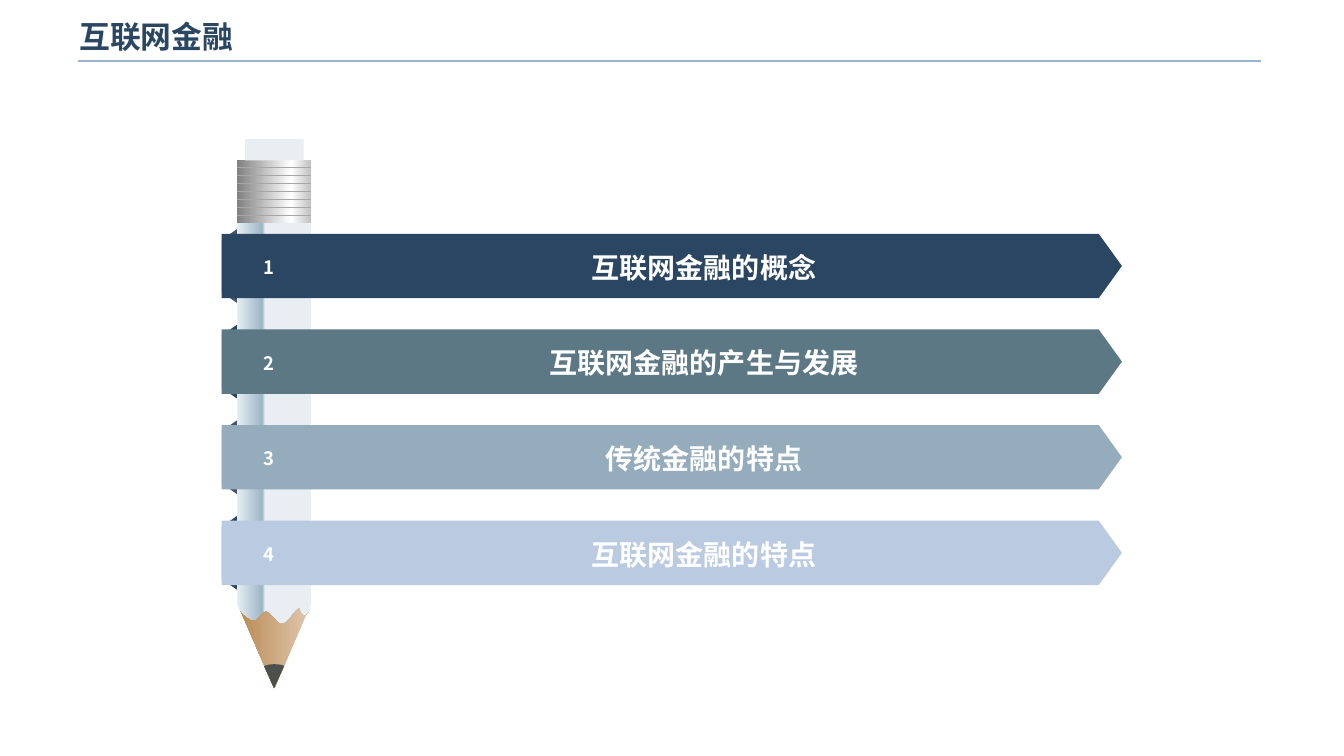
from dataclasses import dataclass

from lxml.etree import SubElement
from pptx import Presentation
from pptx.dml.color import RGBColor
from pptx.enum.shapes import MSO_CONNECTOR as Connector, MSO_SHAPE as Preset
from pptx.enum.text import MSO_ANCHOR as Anchor, MSO_AUTO_SIZE as AutoSize, PP_ALIGN as Align
from pptx.oxml.ns import qn
from pptx.util import Pt

NAVY = RGBColor(0x2B, 0x46, 0x63)
SLATE = RGBColor(0x42, 0x56, 0x68)
TEAL = RGBColor(0x5C, 0x78, 0x85)
MIST = RGBColor(0x94, 0xAC, 0xBC)
PERIWINKLE = RGBColor(0xB9, 0xCA, 0xE1)
RULE_BLUE = RGBColor(0x98, 0xB4, 0xD2)
PALE = RGBColor(0xE8, 0xEE, 0xF2)
SHADE = RGBColor(0x9C, 0xB6, 0xC7)
LIGHT_WOOD = RGBColor(0xE1, 0xC9, 0xAF)
DARK_WOOD = RGBColor(0xB8, 0x89, 0x54)
GRAPHITE = RGBColor(0x4C, 0x50, 0x4C)
SILVER = RGBColor(0xBF, 0xBF, 0xBF)
STEEL = RGBColor(0x80, 0x80, 0x80)
GROOVE = RGBColor(0xA6, 0xA6, 0xA6)
WHITE = RGBColor(0xFF, 0xFF, 0xFF)

TITLE_FONT = "Arial"
BODY_FONT = "Noto Sans CJK SC"

BAR_LEFT, BAR_TOP, BAR_WIDTH, BAR_HEIGHT = 158.4, 167, 643, 46
BAR_PITCH = 68.3
PENCIL_LEFT, PENCIL_WIDTH = 169.2, 53.3
FOLD_LENGTH, FOLD_DEPTH = 52.6, 10.8
FERRULE_TOP, FERRULE_HEIGHT = 114.5, 44.6
GROOVE_COUNT, GROOVE_PITCH = 7, 5.76

Point = tuple[float, float]
Stops = list[tuple[int, RGBColor]]


@dataclass
class Topic:
    text: str
    color: RGBColor
    fold_color: RGBColor


TOPICS = [
    Topic("互联网金融的概念", NAVY, SLATE),
    Topic("互联网金融的产生与发展", TEAL, NAVY),
    Topic("传统金融的特点", MIST, SLATE),
    Topic("互联网金融的特点", PERIWINKLE, NAVY),
]

# Each entry is one point of a straight edge, or three points of a cubic curve.
BODY_OUTLINE = [
    [(169.2, 159.1)],
    [(222.5, 159.1)],
    [(222.5, 429.8)],
    [(221.8, 436.3), (219.6, 438.5), (217.4, 439.2)],
    [(213.8, 437), (215.3, 432.7), (213.1, 434.2)],
    [(210.2, 434.9), (205.9, 444.2), (201.6, 445)],
    [(198, 445), (193.7, 436.3), (190.1, 436.3)],
    [(186.5, 436.3), (183.6, 443.5), (180.7, 442.8)],
    [(175, 440.6), (171.4, 436.3), (169.2, 432)],
]
TIP_OUTLINE = [
    [(195.8, 474.5)],
    [(200.2, 474.5), (202.3, 475.2), (203, 475.9)],
    [(195.8, 491.8)],
    [(188.6, 475.9)],
    [(190.1, 475.2), (192.2, 474.5), (195.8, 474.5)],
]


def fill_solid(shape, color: RGBColor) -> None:
    shape.fill.solid()
    shape.fill.fore_color.rgb = color


def fill_gradient(shape, stops: Stops, angle: int) -> None:
    """Fill with any number of stops; the angle runs clockwise in degrees."""
    shape.fill.gradient()
    gradient = shape._element.spPr.find(qn("a:gradFill"))
    gradient.set("rotWithShape", "1")
    for child in list(gradient):
        gradient.remove(child)
    stop_list = SubElement(gradient, qn("a:gsLst"))
    for percent, color in stops:
        stop = SubElement(stop_list, qn("a:gs"), pos=str(percent * 1000))
        SubElement(stop, qn("a:srgbClr"), val=str(color))
    SubElement(gradient, qn("a:lin"), ang=str(angle * 60000), scaled="0")


def add_preset(page, preset: Preset, left: float, top: float, width: float, height: float):
    shape = page.shapes.add_shape(preset, Pt(left), Pt(top), Pt(width), Pt(height))
    shape.shadow.inherit = False
    shape.line.fill.background()
    return shape


def curve_points(controls: list[Point], steps: int = 12) -> list[Point]:
    """Sample a cubic curve given by four points, leaving out its start."""
    points = []
    for step in range(1, steps + 1):
        t = step / steps
        weights = ((1 - t) ** 3, 3 * t * (1 - t) ** 2, 3 * t * t * (1 - t), t ** 3)
        points.append(tuple(sum(w * p[axis] for w, p in zip(weights, controls))
                            for axis in (0, 1)))
    return points


def add_outline(page, outline: list[list[Point]]):
    points = list(outline[0])
    for segment in outline[1:]:
        points += segment if len(segment) == 1 else curve_points([points[-1], *segment])
    start, *rest = [(Pt(x), Pt(y)) for x, y in points]
    builder = page.shapes.build_freeform(*start)
    builder.add_line_segments(rest, close=True)
    shape = builder.convert_to_shape()
    shape.shadow.inherit = False
    shape.line.fill.background()
    return shape


def add_rule(page, left: float, right: float, y: float, color: RGBColor, weight: float):
    rule = page.shapes.add_connector(Connector.STRAIGHT, Pt(left), Pt(y), Pt(right), Pt(y))
    rule.line.color.rgb = color
    rule.line.width = Pt(weight)
    SubElement(rule._element.spPr, qn("a:effectLst"))
    return rule


def add_text(page, text: str, left: float, top: float, width: float, height: float,
             size: float, color: RGBColor, font: str):
    box = page.shapes.add_textbox(Pt(left), Pt(top), Pt(width), Pt(height))
    frame = box.text_frame
    frame.word_wrap = True
    frame.text = text
    span = frame.paragraphs[0].runs[0]
    span.font.name = font
    span.font.size = Pt(size)
    span.font.bold = True
    span.font.color.rgb = color
    SubElement(span._r.get_or_add_rPr(), qn("a:ea"), typeface=BODY_FONT)
    return box


def add_label(page, text: str, left: float, top: float, width: float, height: float,
              size: float) -> None:
    """Add centred white text on a bar."""
    frame = add_text(page, text, left, top, width, height, size, WHITE, BODY_FONT).text_frame
    frame.auto_size = AutoSize.SHAPE_TO_FIT_TEXT
    frame.paragraphs[0].alignment = Align.CENTER
    frame.paragraphs[0].line_spacing = 1.2


def add_pencil(page) -> None:
    wood = add_preset(page, Preset.PENTAGON, 164.9, 434.2, 61.9, PENCIL_WIDTH)
    wood.adjustments[0] = 1.16
    wood.rotation = 90
    fill_gradient(wood, [(0, LIGHT_WOOD), (100, DARK_WOOD)], 90)

    body = add_outline(page, BODY_OUTLINE)
    fill_gradient(body, [(0, PALE), (34, SHADE), (38, PALE), (100, PALE)], 0)

    ferrule = add_preset(page, Preset.RECTANGLE, PENCIL_LEFT, FERRULE_TOP,
                         PENCIL_WIDTH, FERRULE_HEIGHT)
    fill_gradient(ferrule, [(0, SILVER), (27, WHITE), (100, STEEL)], 180)
    fill_solid(add_preset(page, Preset.RECTANGLE, 175, 99.4, 41.8, 15.1), PALE)
    fill_solid(add_outline(page, TIP_OUTLINE), GRAPHITE)

    middle = GROOVE_COUNT // 2
    for index in range(GROOVE_COUNT):
        y = FERRULE_TOP + FERRULE_HEIGHT / 2 + (index - middle) * GROOVE_PITCH
        groove = add_rule(page, PENCIL_LEFT, PENCIL_LEFT + PENCIL_WIDTH, y, GROOVE, 0.5)
        if index == middle:
            groove.begin_connect(ferrule, 1)
            groove.end_connect(ferrule, 3)


def add_topic(page, number: int, topic: Topic) -> None:
    top = BAR_TOP + (number - 1) * BAR_PITCH
    middle = top + BAR_HEIGHT / 2
    fold = add_preset(page, Preset.TRAPEZOID, PENCIL_LEFT - (FOLD_LENGTH + FOLD_DEPTH) / 2,
                      middle - FOLD_DEPTH / 2, FOLD_LENGTH, FOLD_DEPTH)
    fold.adjustments[0] = 0.7
    fold.rotation = 270
    fill_solid(fold, topic.fold_color)
    bar = add_preset(page, Preset.PENTAGON, BAR_LEFT, top, BAR_WIDTH, BAR_HEIGHT)
    bar.adjustments[0] = 0.36
    fill_solid(bar, topic.color)
    add_label(page, topic.text, 289.4, top + 3.4, 427, 36, 20)
    add_label(page, str(number), 162, top + 9.2, 59.8, 26.6, 13.2)


def main() -> None:
    deck = Presentation()
    deck.slide_width, deck.slide_height = Pt(960), Pt(540)
    page = deck.slides.add_slide(deck.slide_layouts[6])
    add_rule(page, 55.8, 900.7, 43.5, RULE_BLUE, 1)
    title = add_text(page, "互联网金融", 49.7, 6.5, 771, 38.2, 22, NAVY, TITLE_FONT)
    title.text_frame.vertical_anchor = Anchor.MIDDLE
    add_pencil(page)
    for number, topic in enumerate(TOPICS, start=1):
        add_topic(page, number, topic)
    deck.save("out.pptx")


if __name__ == "__main__":
    main()
